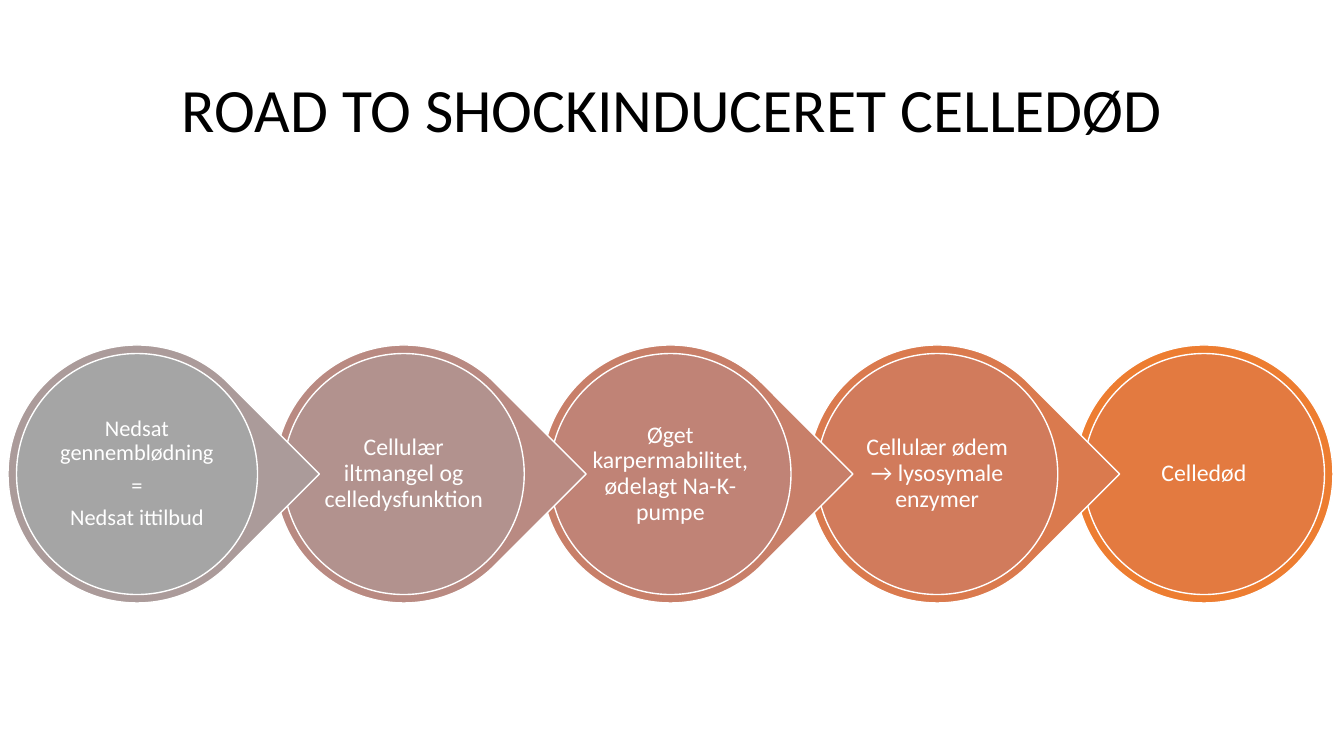
from dataclasses import dataclass

from pptx import Presentation
from pptx.dml.color import RGBColor
from pptx.enum.shapes import MSO_SHAPE
from pptx.enum.text import MSO_ANCHOR, PP_ALIGN
from pptx.slide import Slide
from pptx.text.text import TextFrame
from pptx.util import Emu, Pt

ELLIPSE, TEARDROP = MSO_SHAPE.OVAL, MSO_SHAPE.TEAR
MIDDLE, CENTER = MSO_ANCHOR.MIDDLE, PP_ALIGN.CENTER
TITLE_ONLY = 5


@dataclass(frozen=True)
class Theme:
    font: str = "Calibri"
    title: str = "000000"
    white: str = "FFFFFF"
    title_size: int = 44
    step_size: int = 17
    small_size: int = 16
    line_width: int = 1


@dataclass(frozen=True)
class Step:
    lines: tuple[str, ...]
    outer: str
    inner: str
    size: int


THEME = Theme()
STEPS = [
    Step(("Nedsat gennemblødning", "=", "Nedsat ittilbud"), "AB9B9A", "A5A5A5", THEME.small_size),
    Step(("Cellulær iltmangel og celledysfunktion",), "B98A82", "B2928E", THEME.step_size),
    Step(("Øget karpermabilitet, ødelagt Na-K-pumpe",), "C87F69", "C08376", THEME.step_size),
    Step(("Cellulær ødem → lysosymale enzymer",), "DA7A4E", "D17B5C", THEME.step_size),
    Step(("Celledød",), "ED7D31", "E37A40", THEME.step_size),
]

# Process geometry in px
FIRST_X, LAST_X, CENTER_Y = 137, 1204, 474
OUTER, INNER, LABEL, INSET = 258, 241, 172, 2


def px(n: float) -> Emu:
    return Emu(round(n * 914400 / 100.8))


def square(cx: float, size: int) -> tuple[Emu, Emu, Emu, Emu]:
    return px(cx - size / 2), px(CENTER_Y - size / 2), px(size), px(size)


def add_text(tf: TextFrame, lines: tuple[str, ...], size: int, color: str, after: int) -> None:
    tf.word_wrap = True
    tf.vertical_anchor = MIDDLE
    for i, line in enumerate(lines):
        p = tf.add_paragraph() if i else tf.paragraphs[0]
        p.alignment = CENTER
        p.line_spacing = 0.9
        p.space_after = Pt(after)
        r = p.add_run()
        r.text = line
        r.font.name = THEME.font
        r.font.size = Pt(size)
        r.font.color.rgb = RGBColor.from_string(color)


def add_bubble(s: Slide, kind: MSO_SHAPE, cx: float, size: int, fill: str) -> None:
    sp = s.shapes.add_shape(kind, *square(cx, size))
    sp.shadow.inherit = False
    sp.fill.solid()
    sp.fill.fore_color.rgb = RGBColor.from_string(fill)
    sp.line.color.rgb = RGBColor.from_string(THEME.white)
    sp.line.width = Pt(THEME.line_width)
    if kind == TEARDROP:
        sp.adjustments[0] = 1
        sp.rotation = 45


def add_step(s: Slide, step: Step, cx: float, last: bool) -> None:
    add_bubble(s, ELLIPSE if last else TEARDROP, cx, OUTER, step.outer)
    add_bubble(s, ELLIPSE, cx, INNER, step.inner)
    tf = s.shapes.add_textbox(*square(cx, LABEL)).text_frame
    tf.margin_left = tf.margin_right = tf.margin_top = tf.margin_bottom = px(INSET)
    add_text(tf, step.lines, step.size, THEME.white, 6)


def main() -> None:
    prs = Presentation()
    prs.slide_width, prs.slide_height = px(1344), px(756)
    s = prs.slides.add_slide(prs.slide_layouts[TITLE_ONLY])

    # Title
    title = s.shapes.title
    title.left, title.top, title.width, title.height = px(93), px(40), px(1159), px(146)
    add_text(title.text_frame, ("ROAD TO SHOCKINDUCERET CELLEDØD",), THEME.title_size, THEME.title, 0)

    # Steps, drawn from the right so each tip overlaps the next circle
    end = len(STEPS) - 1
    pitch = (LAST_X - FIRST_X) / end
    for i in range(end, -1, -1):
        add_step(s, STEPS[i], FIRST_X + i * pitch, i == end)

    prs.save("out.pptx")


if __name__ == "__main__":
    main()
